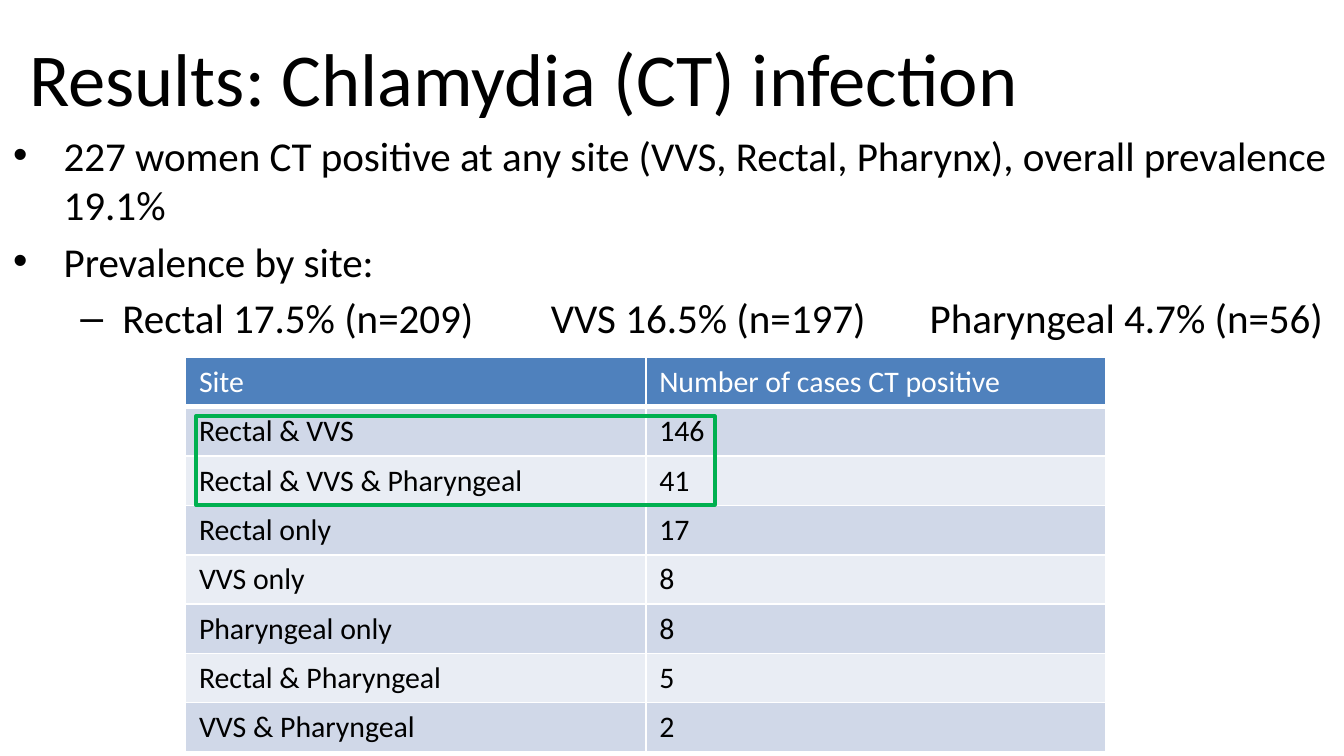
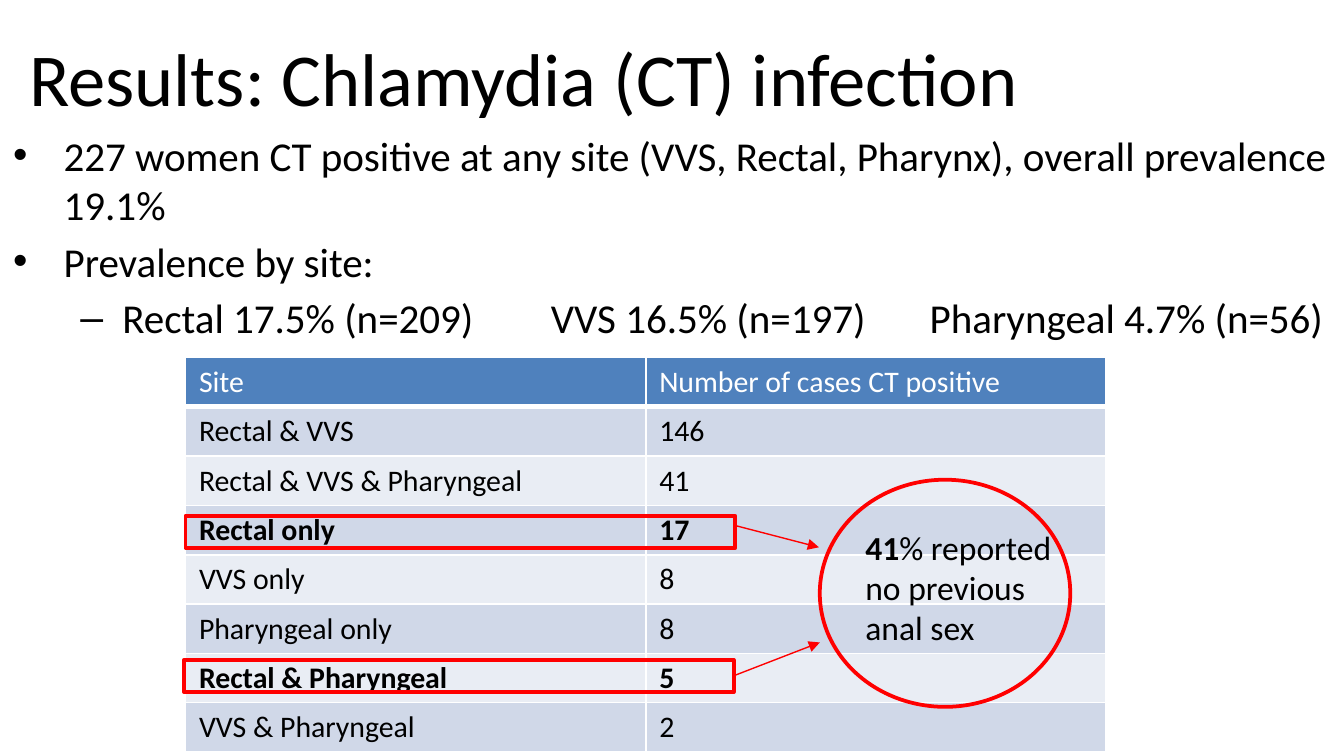
import dataclasses
import typing

import lxml.etree
import pptx
import pptx.dml.color
import pptx.enum.shapes
import pptx.enum.text
import pptx.oxml.ns
import pptx.util

Pt = pptx.util.Pt
qn = pptx.oxml.ns.qn
Kind = pptx.enum.shapes.MSO_SHAPE
Anchor = pptx.enum.text.MSO_ANCHOR

FONT = "Calibri"
INK = {
    "black": "000000",
    "white": "FFFFFF",
    "head": "4F81BD",
    "odd": "D0D8E8",
    "even": "E9EDF4",
    "green": "00B050",
    "red": "FF0000",
}


@dataclasses.dataclass(frozen=True)
class Box:
    left: float
    top: float
    width: float
    height: float

    def span(self) -> tuple:
        return Pt(self.left), Pt(self.top), Pt(self.width), Pt(self.height)


@dataclasses.dataclass(frozen=True)
class Point:
    text: str
    mark: str
    left: float
    hang: float
    level: int = 0
    tabs: tuple = ()


@dataclasses.dataclass(frozen=True)
class Frame:
    kind: typing.Any
    box: Box
    ink: str


@dataclasses.dataclass(frozen=True)
class Arrow:
    start: tuple
    end: tuple


TITLE = "Results: Chlamydia (CT) infection"
POINTS = (
    Point("227 women CT positive at any site (VVS, Rectal, Pharynx), "
          "overall prevalence 19.1%", "•", 27, 27),
    Point("Prevalence by site:", "•", 27, 27),
    Point("Rectal 17.5% (n=209)\tVVS 16.5% (n=197)\tPharyngeal 4.7% (n=56)",
          "–", 58.5, 22.5, 1, (288, 491)),
)
ROWS = (
    ("Site", "Number of cases CT positive"),
    ("Rectal & VVS", "146"),
    ("Rectal & VVS & Pharyngeal", "41"),
    ("Rectal only", "17"),
    ("VVS only", "8"),
    ("Pharyngeal only", "8"),
    ("Rectal & Pharyngeal", "5"),
    ("VVS & Pharyngeal", "2"),
)
GRID = Box(99.4, 191.5, 493.2, 211.2)
PAIR = Frame(Kind.RECTANGLE, Box(105, 223, 278, 47.5), "green")
SOLO = (
    Frame(Kind.RECTANGLE, Box(99.4, 276.3, 294.5, 17.3), "red"),
    Frame(Kind.RECTANGLE, Box(98.6, 353.5, 294.5, 17.3), "red"),
)
OVAL = Frame(Kind.OVAL, Box(439.2, 257, 134.2, 121.7), "red")
ARROWS = (
    Arrow((394.4, 281.7), (438.7, 293.2)),
    Arrow((393.2, 362), (439.2, 344.2)),
)


def tint(name: str) -> pptx.dml.color.RGBColor:
    return pptx.dml.color.RGBColor.from_string(INK[name])


def write(para, text: str, *, size: float, ink: str = "black",
          bold: bool = False) -> None:
    run = para.add_run()
    run.text = text
    run.font.name = FONT
    run.font.size = Pt(size)
    run.font.bold = bold
    run.font.color.rgb = tint(ink)


def add_box(slide, box: Box, anchor=Anchor.TOP):
    frame = slide.shapes.add_textbox(*box.span()).text_frame
    frame.word_wrap = True
    frame.vertical_anchor = anchor
    return frame


def add_point(para, point: Point) -> None:
    para.level = point.level
    para.space_before = Pt(4)
    write(para, point.text, size=22)
    props = para._p.get_or_add_pPr()
    props.set("marL", str(Pt(point.left)))
    props.set("indent", str(-Pt(point.hang)))
    lxml.etree.SubElement(props, qn("a:buFont"), typeface="Arial")
    lxml.etree.SubElement(props, qn("a:buChar"), char=point.mark)
    if point.tabs:
        stops = lxml.etree.SubElement(props, qn("a:tabLst"))
        for place in point.tabs:
            lxml.etree.SubElement(stops, qn("a:tab"), pos=str(Pt(place)),
                                  algn="l")


def edge(cell, head: bool) -> None:
    props = cell._tc.get_or_add_tcPr()
    for side in "LRTB":
        width = 3 if head and side == "B" else 1
        line = lxml.etree.SubElement(props, qn(f"a:ln{side}"),
                                     w=str(Pt(width)))
        fill = lxml.etree.SubElement(line, qn("a:solidFill"))
        lxml.etree.SubElement(fill, qn("a:srgbClr"), val=INK["white"])


def add_grid(slide, strong: tuple) -> None:
    table = slide.shapes.add_table(len(ROWS), 2, *GRID.span()).table
    table.first_row = table.horz_banding = False
    for col in table.columns:
        col.width = Pt(GRID.width / 2)
    for i, row in enumerate(ROWS):
        table.rows[i].height = Pt(GRID.height / len(ROWS))
        head = i == 0
        shade = "head" if head else "odd" if i % 2 else "even"
        for j, text in enumerate(row):
            cell = table.cell(i, j)
            edge(cell, head)
            cell.fill.solid()
            cell.fill.fore_color.rgb = tint(shade)
            write(cell.text_frame.paragraphs[0], text, size=16,
                  ink="white" if head else "black", bold=i in strong)


def add_frame(slide, item: Frame) -> None:
    shape = slide.shapes.add_shape(item.kind, *item.box.span())
    shape.shadow.inherit = False
    shape.fill.background()
    shape.line.color.rgb = tint(item.ink)
    shape.line.width = Pt(2)


def add_arrow(slide, item: Arrow) -> None:
    link = slide.shapes.add_connector(
        pptx.enum.shapes.MSO_CONNECTOR.STRAIGHT,
        *map(Pt, item.start + item.end))
    link.line.color.rgb = tint("red")
    link.line.width = Pt(0.75)
    lxml.etree.SubElement(link.line._get_or_add_ln(), qn("a:tailEnd"),
                          type="triangle")
    lxml.etree.SubElement(link._element.spPr, qn("a:effectLst"))


def add_page(deck, strong: tuple = ()):
    slide = deck.slides.add_slide(deck.slide_layouts[6])
    title = add_box(slide, Box(8.6, 10, 646.6, 62.6), Anchor.MIDDLE)
    write(title.paragraphs[0], TITLE, size=40)
    body = add_box(slide, Box(0, 66.2, 730, 136))
    for i, point in enumerate(POINTS):
        para = body.add_paragraph() if i else body.paragraphs[0]
        add_point(para, point)
    add_grid(slide, strong)
    return slide


def main() -> None:
    deck = pptx.Presentation()
    deck.slide_width, deck.slide_height = Pt(720), Pt(405)

    add_frame(add_page(deck), PAIR)

    slide = add_page(deck, strong=(3, 6))
    for item in SOLO:
        add_frame(slide, item)
    note = add_box(slide, Box(456.5, 278.6, 130.3, 72.7)).paragraphs[0]
    write(note, "41", size=18, bold=True)
    write(note, "% reported no previous anal sex", size=18)
    add_frame(slide, OVAL)
    for item in ARROWS:
        add_arrow(slide, item)

    deck.save("out.pptx")


if __name__ == "__main__":
    main()
